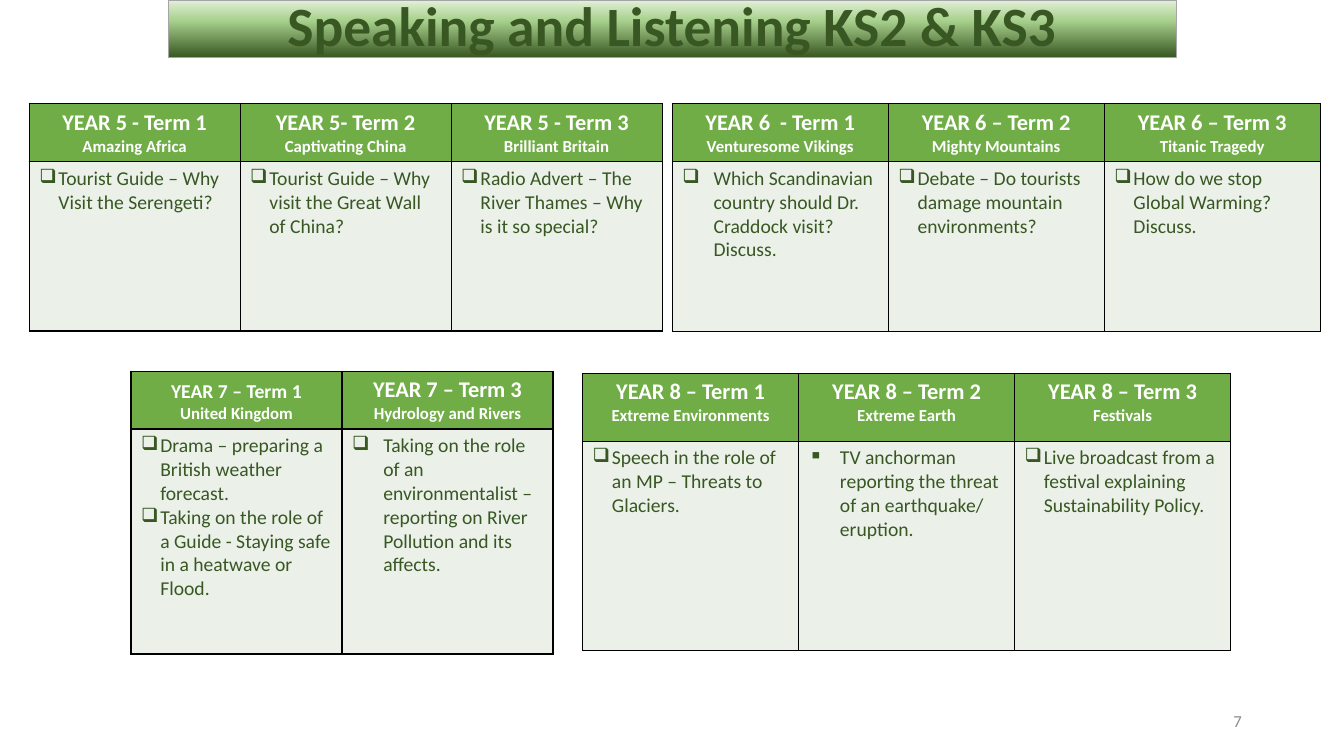
from copy import deepcopy
from dataclasses import dataclass

from lxml.etree import SubElement
from pptx import Presentation
from pptx.dml.color import RGBColor
from pptx.enum.shapes import MSO_SHAPE as Shape
from pptx.enum.text import MSO_ANCHOR as Anchor, PP_ALIGN as Align
from pptx.oxml import parse_xml
from pptx.oxml.ns import nsdecls, qn
from pptx.util import Inches, Pt

WIDTH, HEIGHT = Inches(13.33), Inches(7.5)


@dataclass(frozen=True)
class Theme:
    font: str = "Calibri"
    dark: str = "385723"
    header: str = "70AD47"
    body: str = "EBF1E9"
    white: str = "FFFFFF"
    border: str = "000000"
    outline: str = "A5A5A5"
    muted: str = "8C8C8C"
    gradient: tuple = ((0, "E2F0D9"), (0.35, "A9D18E"), (1, "385723"))
    title_size: float = 39.6
    term_size: float = 16
    text_size: float = 14
    small_size: float = 12
    term_line: float = 19.5


THEME = Theme()
BOX, SQUARE = "❑", "▪"
NARROW, WIDE = 0.19, 0.31


@dataclass(frozen=True)
class Term:
    name: str
    topic: str
    tasks: tuple
    bullet: str = BOX
    indent: float = NARROW
    name_size: float = THEME.term_size


@dataclass(frozen=True)
class Year:
    left: float
    top: float
    column: float
    rows: tuple
    terms: tuple


YEARS = (
    Year(2.17, 13.73, 15.7, (7.65, 22.4), (
        Term("YEAR 5 - Term 1", "Amazing Africa",
             ("Tourist Guide – Why Visit the Serengeti?",)),
        Term("YEAR 5- Term 2", "Captivating China",
             ("Tourist Guide – Why visit the Great Wall of China?",)),
        Term("YEAR 5 - Term 3", "Brilliant Britain",
             ("Radio Advert – The River Thames – Why is it so special?",)),
    )),
    Year(50.02, 13.73, 16.07, (7.65, 22.5), (
        Term("YEAR 6  - Term 1", "Venturesome Vikings",
             ("Which Scandinavian country should Dr. Craddock visit? Discuss.",),
             indent=WIDE),
        Term("YEAR 6 – Term 2", "Mighty Mountains",
             ("Debate – Do tourists damage mountain environments?",)),
        Term("YEAR 6 – Term 3", "Titanic Tragedy",
             ("How do we stop Global Warming? Discuss.",)),
    )),
    Year(9.75, 49.1, 15.7, (7.65, 29.75), (
        Term("YEAR 7 – Term 1", "United Kingdom",
             ("Drama – preparing a British weather forecast.",
              "Taking on the role of a Guide - Staying safe in a heatwave or Flood."),
             name_size=THEME.text_size),
        Term("YEAR 7 – Term 3", "Hydrology and Rivers",
             ("Taking on the role of an environmentalist – "
              "reporting on River Pollution and its affects.",),
             indent=WIDE),
    )),
    Year(43.35, 49.4, 16.07, (8.95, 27.65), (
        Term("YEAR 8 – Term 1", "Extreme Environments",
             ("Speech in the role of an MP – Threats to Glaciers.",)),
        Term("YEAR 8 – Term 2", "Extreme Earth",
             ("TV anchorman reporting the threat of an earthquake/ eruption.",),
             bullet=SQUARE, indent=WIDE),
        Term("YEAR 8 – Term 3", "Festivals",
             ("Live broadcast from a festival explaining Sustainability Policy.",)),
    )),
)


def across(percent):
    return round(WIDTH * percent / 100)


def down(percent):
    return round(HEIGHT * percent / 100)


def write(para, text, size, color, bold=False, align=Align.LEFT):
    para.text = text
    para.alignment = align
    para.font.name = THEME.font
    para.font.size = Pt(size)
    para.font.bold = bold
    para.font.color.rgb = RGBColor.from_string(color)


def add_bullet(para, char, indent):
    props = para._p.get_or_add_pPr()
    props.set("marL", str(Inches(indent)))
    props.set("indent", str(-Inches(indent)))
    SubElement(props, qn("a:buChar")).set("char", char)


def style_cell(cell, color):
    cell.fill.solid()
    cell.fill.fore_color.rgb = RGBColor.from_string(color)
    props = cell._tc.get_or_add_tcPr()
    for index, side in enumerate("LRTB"):
        props.insert(index, parse_xml(
            f'<a:ln{side} {nsdecls("a")} w="{Pt(1)}"><a:solidFill>'
            f'<a:srgbClr val="{THEME.border}"/></a:solidFill></a:ln{side}>'))


def fill_header(cell, term):
    style_cell(cell, THEME.header)
    name = cell.text_frame.paragraphs[0]
    write(name, term.name, term.name_size, THEME.white, True, Align.CENTER)
    name.line_spacing = Pt(THEME.term_line)
    topic = cell.text_frame.add_paragraph()
    write(topic, term.topic, THEME.small_size, THEME.white, True, Align.CENTER)


def fill_tasks(cell, term):
    style_cell(cell, THEME.body)
    frame = cell.text_frame
    for index, task in enumerate(term.tasks):
        para = frame.add_paragraph() if index else frame.paragraphs[0]
        write(para, task, THEME.text_size, THEME.dark)
        add_bullet(para, term.bullet, term.indent)


def add_year(page, year):
    count = len(year.terms)
    table = page.shapes.add_table(
        2, count, across(year.left), down(year.top),
        across(year.column * count), down(sum(year.rows))).table
    for row, height in zip(table.rows, year.rows):
        row.height = down(height)
    for index, term in enumerate(year.terms):
        table.columns[index].width = across(year.column)
        fill_header(table.cell(0, index), term)
        fill_tasks(table.cell(1, index), term)


def add_title(page, text):
    banner = page.shapes.add_shape(
        Shape.RECTANGLE, across(12.5), 0, across(75), down(7.6))
    banner.shadow.inherit = False
    banner.line.color.rgb = RGBColor.from_string(THEME.outline)
    banner.line.width = Pt(0.5)
    banner.fill.gradient()
    banner.fill.gradient_angle = 270
    first = banner.fill.gradient_stops[0]._gs
    first.addnext(deepcopy(first))
    for stop, (position, color) in zip(banner.fill.gradient_stops, THEME.gradient):
        stop.position = position
        stop.color.rgb = RGBColor.from_string(color)
    frame = banner.text_frame
    frame.vertical_anchor = Anchor.MIDDLE
    para = frame.paragraphs[0]
    write(para, text, THEME.title_size, THEME.dark, True, Align.CENTER)
    para.line_spacing = 0.9


def add_page_number(page, number):
    box = page.shapes.add_textbox(across(70.65), down(92.7), across(22.5), down(5.3))
    box.text_frame.word_wrap = True
    box.text_frame.vertical_anchor = Anchor.MIDDLE
    write(box.text_frame.paragraphs[0], number, THEME.small_size, THEME.muted,
          align=Align.RIGHT)


def main():
    deck = Presentation()
    deck.slide_width, deck.slide_height = WIDTH, HEIGHT
    page = deck.slides.add_slide(deck.slide_layouts[6])
    add_title(page, "Speaking and Listening KS2 & KS3")
    add_page_number(page, "7")
    for year in YEARS:
        add_year(page, year)
    deck.save("out.pptx")


if __name__ == "__main__":
    main()
